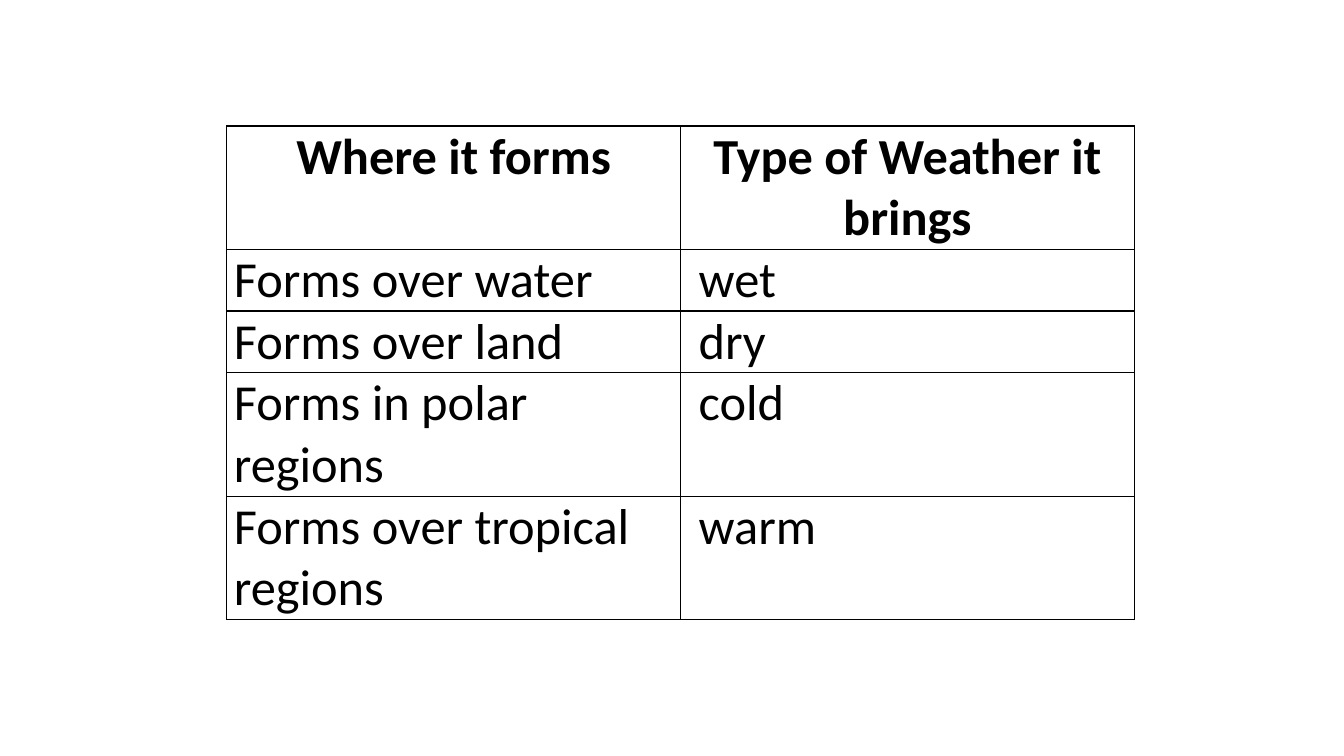
"""Build a slide with a table of where air masses form and the weather they bring."""
import dataclasses

import lxml.etree
import pptx
import pptx.dml.color
import pptx.enum.text
import pptx.oxml.ns
import pptx.table
import pptx.util

COLORS = {"ink": "000000", "paper": "FFFFFF"}
SLIDE_WIDTH = pptx.util.Inches(13.33)
SLIDE_HEIGHT = pptx.util.Inches(7.5)
GRID_COLUMN = pptx.util.Inches(0.75)
TEXT_LINE = pptx.util.Inches(0.61)
SIDE_MARGIN = pptx.util.Inches(0.07)
WEATHER_MARGIN = pptx.util.Inches(0.18)


@dataclasses.dataclass(frozen=True)
class AirMass:
    origin: str
    weather: str
    lines: int
    heading: bool = False


AIR_MASSES = [
    AirMass("Where it forms", "Type of Weather it brings", 2, heading=True),
    AirMass("Forms over water", "wet", 1),
    AirMass("Forms over land", "dry", 1),
    AirMass("Forms in polar regions", "cold", 2),
    AirMass("Forms over tropical regions", "warm", 2),
]


def draw_borders(cell: pptx.table._Cell) -> None:
    properties = cell._tc.get_or_add_tcPr()
    for position, side in enumerate(("lnL", "lnR", "lnT", "lnB")):
        border = lxml.etree.Element(
            pptx.oxml.ns.qn(f"a:{side}"), w=str(pptx.util.Pt(1))
        )
        fill = lxml.etree.SubElement(border, pptx.oxml.ns.qn("a:solidFill"))
        lxml.etree.SubElement(
            fill, pptx.oxml.ns.qn("a:srgbClr"), val=COLORS["ink"]
        )
        properties.insert(position, border)


def write_cell(
    cell: pptx.table._Cell, wording: str, heading: bool, left_margin: int
) -> None:
    cell.margin_left = left_margin
    cell.margin_right = SIDE_MARGIN
    cell.margin_top = cell.margin_bottom = 0
    cell.fill.solid()
    cell.fill.fore_color.rgb = pptx.dml.color.RGBColor.from_string(COLORS["paper"])
    draw_borders(cell)
    paragraph = cell.text_frame.paragraphs[0]
    alignment = pptx.enum.text.PP_ALIGN
    paragraph.alignment = alignment.CENTER if heading else alignment.LEFT
    run = paragraph.add_run()
    run.text = wording
    run.font.name = "Calibri"
    run.font.size = pptx.util.Pt(36)
    run.font.bold = heading
    run.font.color.rgb = pptx.dml.color.RGBColor.from_string(COLORS["ink"])


def main() -> None:
    presentation = pptx.Presentation()
    presentation.slide_width = SLIDE_WIDTH
    presentation.slide_height = SLIDE_HEIGHT
    slide = presentation.slides.add_slide(presentation.slide_layouts[6])

    total_lines = sum(air_mass.lines for air_mass in AIR_MASSES)
    weather_table = slide.shapes.add_table(
        len(AIR_MASSES), 2,
        3 * GRID_COLUMN, SLIDE_HEIGHT // 6,
        12 * GRID_COLUMN, total_lines * TEXT_LINE,
    ).table
    weather_table.horz_banding = False
    weather_table.first_row = False

    for row, air_mass in zip(weather_table.rows, AIR_MASSES):
        row.height = air_mass.lines * TEXT_LINE
        origin_cell, weather_cell = row.cells
        weather_margin = SIDE_MARGIN if air_mass.heading else WEATHER_MARGIN
        write_cell(origin_cell, air_mass.origin, air_mass.heading, SIDE_MARGIN)
        write_cell(weather_cell, air_mass.weather, air_mass.heading, weather_margin)

    presentation.save("out.pptx")


if __name__ == "__main__":
    main()
